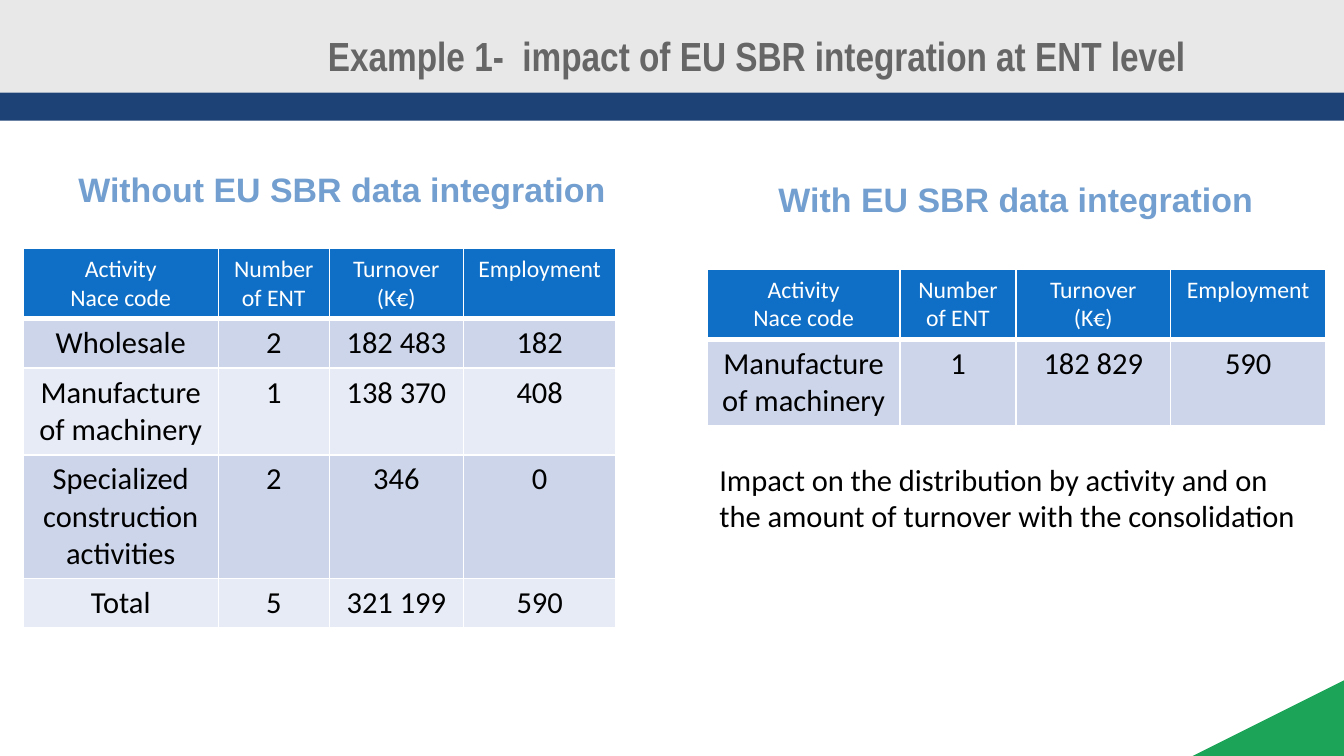
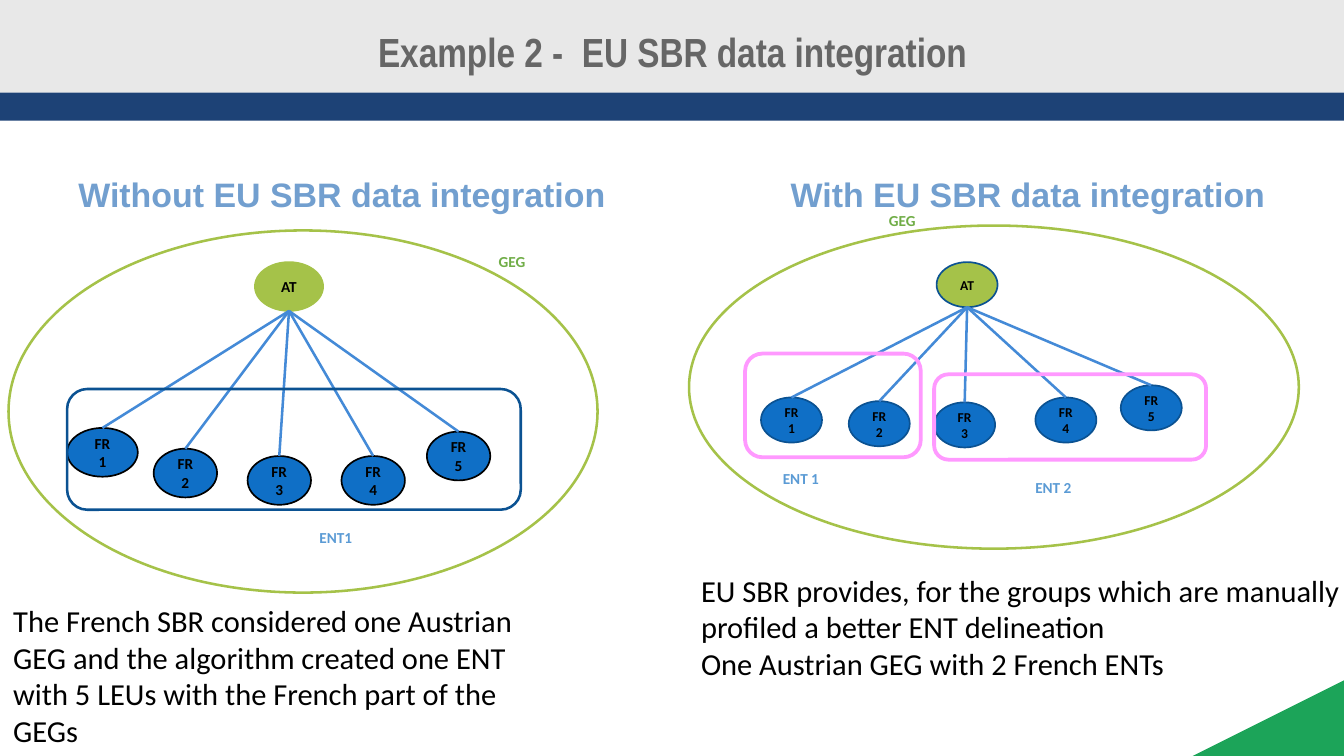
from lxml import etree
from pptx import Presentation
from pptx.dml.color import RGBColor
from pptx.enum.shapes import MSO_CONNECTOR, MSO_SHAPE
from pptx.enum.text import MSO_ANCHOR, MSO_AUTO_SIZE, PP_ALIGN
from pptx.oxml import parse_xml
from pptx.oxml.ns import nsdecls, qn
from pptx.util import Inches, Pt

OVAL, ROUNDED, BOX = MSO_SHAPE.OVAL, MSO_SHAPE.ROUNDED_RECTANGLE, MSO_SHAPE.RECTANGLE
STRAIGHT = MSO_CONNECTOR.STRAIGHT
TOP, MIDDLE, BOTTOM = MSO_ANCHOR.TOP, MSO_ANCHOR.MIDDLE, MSO_ANCHOR.BOTTOM
LEFT, CENTER = PP_ALIGN.LEFT, PP_ALIGN.CENTER
FIXED, GROW = MSO_AUTO_SIZE.NONE, MSO_AUTO_SIZE.SHAPE_TO_FIT_TEXT

WIDTH, HEIGHT = 11.02, 6.2
TWO_CONTENT = 3

COLORS = {
    "black": "000000", "white": "FFFFFF", "title": "666666", "heading": "729FCF",
    "band": "E8E8E8", "stripe": "1D4276", "corner": "1CA459",
    "blue": "0F6FC6", "navy": "0B5292", "link": "448AD7", "lime": "A5C249",
    "pink": "FF99FF", "geg": "70AD47", "ent": "5B9BD5",
    "odd row": "CCD5EA", "even row": "E7EBF5",
}

# Text styles: colour name and font values
STYLES = {
    "title": ("title", {"name": "Arial Narrow", "size": Pt(24), "bold": True}),
    "heading": ("heading", {"name": "Arial", "size": Pt(20), "bold": True}),
    "body": ("black", {"name": "Calibri", "size": Pt(18), "bold": False}),
    "table head": ("white", {"name": "Calibri", "size": Pt(14), "bold": False}),
    "node": ("black", {"name": "Calibri", "size": Pt(9), "bold": True}),
    "small node": ("black", {"name": "Calibri", "size": Pt(8), "bold": True}),
    "geg": ("geg", {"name": "Calibri", "size": Pt(9), "bold": True}),
    "ent": ("ent", {"name": "Calibri", "size": Pt(9), "bold": True}),
}


def color(name):
    return RGBColor.from_string(COLORS[name])


def inches(place):
    return [Inches(value) for value in place]


class Deck:
    def __init__(self):
        self.prs = Presentation()
        self.prs.slide_width, self.prs.slide_height = inches((WIDTH, HEIGHT))
        self.slide = None

    def new_slide(self, title, title_at, left_at, right_at):
        layout = self.prs.slide_layouts[TWO_CONTENT]
        self.slide = self.prs.slides.add_slide(layout)
        if len(self.prs.slides) == 1:
            self.decorate_master()
        heading, left, right = self.slide.placeholders
        self.placeholder(heading, title_at, title, "title", MIDDLE)
        self.placeholder(left, left_at, "Without EU SBR data integration",
                         "heading", BOTTOM, indent=0.12)
        self.placeholder(right, right_at, "With EU SBR data integration",
                         "heading", BOTTOM)

    def decorate_master(self):
        """Put the bands and the corner behind every slide."""
        band = self.shape(BOX, (0, 0, WIDTH, 0.76), fill="band")
        stripe = self.shape(BOX, (0, 0.76, WIDTH, 0.23), fill="stripe")
        outline = self.slide.shapes.build_freeform(Inches(WIDTH), Inches(5.58))
        outline.add_line_segments([inches((9.78, HEIGHT)), inches((WIDTH, HEIGHT))])
        corner = outline.convert_to_shape()
        self.paint(corner, fill="corner")
        tree = self.prs.slide_master.element.cSld.spTree
        for number, part in enumerate((band, stripe, corner)):
            part.element.nvSpPr.cNvPr.id = 100 + number
            tree.insert(2 + number, part.element)

    def fill_text(self, frame, text, style, align=LEFT):
        """Fill a text frame, one paragraph for each line."""
        color_name, values = STYLES[style]
        for number, line in enumerate(text.split("\n")):
            paragraph = frame.add_paragraph() if number else frame.paragraphs[0]
            paragraph.alignment = align
            run = paragraph.add_run()
            run.text = line
            for key, value in values.items():
                setattr(run.font, key, value)
            run.font.color.rgb = color(color_name)

    def placeholder(self, holder, place, text, style, anchor, indent=0):
        holder.left, holder.top, holder.width, holder.height = inches(place)
        frame = holder.text_frame
        settings = {"margin_left": 0, "margin_right": 0, "margin_top": 0,
                    "margin_bottom": 0, "word_wrap": True, "auto_size": FIXED,
                    "vertical_anchor": anchor}
        for key, value in settings.items():
            setattr(frame, key, value)
        paragraph = frame.paragraphs[0]
        properties = paragraph._p.get_or_add_pPr()
        properties.set("marL", str(Inches(indent)))
        properties.set("indent", "0")
        etree.SubElement(properties, qn("a:buNone"))
        paragraph.space_before = Pt(0)
        self.fill_text(frame, text, style, CENTER)

    def paint(self, shape, fill=None, line=None, weight=1):
        shape.shadow.inherit = False
        if fill:
            shape.fill.solid()
            shape.fill.fore_color.rgb = color(fill)
        else:
            shape.fill.background()
        if line:
            shape.line.color.rgb = color(line)
            shape.line.width = Pt(weight)
        else:
            shape.line.fill.background()

    def shape(self, kind, place, **look):
        shape = self.slide.shapes.add_shape(kind, *inches(place))
        self.paint(shape, **look)
        return shape

    def node(self, place, text, style, fill, line):
        node = self.shape(OVAL, place, fill=fill, line=line)
        node.text_frame.word_wrap = True
        node.text_frame.vertical_anchor = MIDDLE
        self.fill_text(node.text_frame, text, style, CENTER)

    def link(self, start, end):
        link = self.slide.shapes.add_connector(STRAIGHT, *inches(start + end))
        link.line.color.rgb = color("link")
        link.line.width = Pt(1.5)
        etree.SubElement(link.element.spPr, qn("a:effectLst"))

    def text(self, place, text, style="body", right_margin=0.1):
        frame = self.slide.shapes.add_textbox(*inches(place)).text_frame
        frame.word_wrap = True
        frame.auto_size = GROW
        frame.margin_right = Inches(right_margin)
        self.fill_text(frame, text, style)

    def borders(self, cell, bottom):
        properties = cell._tc.get_or_add_tcPr()
        for side, weight in (("L", 1), ("R", 1), ("T", 1), ("B", bottom)):
            properties.append(parse_xml(
                f'<a:ln{side} {nsdecls("a")} w="{Pt(weight)}"><a:solidFill>'
                f'<a:srgbClr val="{COLORS["white"]}"/></a:solidFill></a:ln{side}>'))

    def table(self, left, top, widths, heights, activities):
        rows = [TABLE_HEAD] + activities
        place = (left, top, sum(widths), sum(heights))
        table = self.slide.shapes.add_table(
            len(rows), len(widths), *inches(place)).table
        table.horz_banding = False
        for column, width in zip(table.columns, widths):
            column.width = Inches(width)
        for number, (row, height, values) in enumerate(zip(table.rows, heights, rows)):
            row.height = Inches(height)
            if number == 0:
                fill, style, bottom = "blue", "table head", 3
            else:
                fill = "odd row" if number % 2 else "even row"
                style, bottom = "body", 1
            for cell, value in zip(row.cells, values):
                self.borders(cell, bottom)
                cell.fill.solid()
                cell.fill.fore_color.rgb = color(fill)
                cell.vertical_anchor = TOP
                self.fill_text(cell.text_frame, value, style, CENTER)

    def group_diagram(self, geg, hub, units, ents, style, node_line, hub_line,
                      ent_line, ent_weight):
        """Draw a group: its head on top, linked to the French units."""
        for number, unit in enumerate(units, 1):
            self.node(unit, f"FR {number}", style, "blue", node_line)
        self.node(hub, "AT", style, "lime", hub_line)
        left, top, width, height = hub
        for x, y, unit_width, _ in units:
            self.link((left + width / 2, top + height), (x + unit_width / 2, y))
        self.shape(OVAL, geg, line="lime", weight=1.5)
        for ent in ents:
            self.shape(ROUNDED, ent, line=ent_line, weight=ent_weight)


TABLE_HEAD = ["Activity\nNace code", "Number of ENT", "Turnover (K€)", "Employment"]


def activity_slide(deck):
    deck.new_slide("Example 1-  impact of EU SBR integration at ENT level",
                   (1.45, 0.2, 9.51, 0.51), (0.07, 1.11, 5.35, 0.61),
                   (5.8, 1.11, 5.06, 0.69))
    deck.table(0.19, 2.04, [1.6, 0.91, 1.1, 1.25], [0.56, 0.4, 0.71, 1.01, 0.4], [
        ["Wholesale", "2", "182 483", "182"],
        ["Manufacture of machinery", "1", "138 370", "408"],
        ["Specialized construction activities", "2", "346", "0"],
        ["Total", "5", "321 199", "590"],
    ])
    deck.table(5.8, 2.21, [1.58, 0.95, 1.27, 1.27], [0.56, 0.71], [
        ["Manufacture of machinery", "1", "182 829", "590"],
    ])
    deck.text((5.8, 3.73, 4.96, 0.71),
              "Impact on the distribution by activity and on the amount of "
              "turnover with the consolidation")


def group_slide(deck):
    deck.new_slide("Example 2 -  EU SBR data integration",
                   (0.76, 0.13, 9.51, 0.58), (0.07, 1.07, 5.35, 0.69),
                   (6.1, 1.07, 4.66, 0.69))

    # Without integration: one ENT
    deck.group_diagram(
        geg=(0.07, 1.89, 4.83, 2.97), hub=(2.09, 2.15, 0.56, 0.4),
        units=[(0.55, 3.51, 0.58, 0.4)] + [
            (x, y, 0.52, 0.4)
            for x, y in ((1.26, 3.68), (2.03, 3.74), (2.8, 3.74), (3.5, 3.54))],
        ents=[(0.55, 3.19, 3.72, 0.99)], style="node", node_line="black",
        hub_line="lime", ent_line="navy", ent_weight=1.5)
    deck.text((3.99, 2.02, 0.6, 0.25), "GEG", "geg")
    deck.text((2.52, 4.28, 0.49, 0.25), "ENT1", "ent")
    deck.text((0.01, 4.89, 4.59, 1.31),
              "The French SBR considered one Austrian GEG and the algorithm "
              "created one ENT with 5 LEUs with the French part of the GEGs")

    # With integration: two ENTs
    deck.group_diagram(
        geg=(5.65, 1.85, 5, 2.65), hub=(7.68, 2.15, 0.5, 0.37),
        units=[(x, y, 0.5, 0.37) for x, y in (
            (6.24, 3.26), (6.96, 3.29), (7.66, 3.3), (8.49, 3.26), (9.19, 3.16))],
        ents=[(6.11, 2.9, 1.44, 0.85), (7.66, 3.07, 2.23, 0.7)],
        style="small node", node_line="navy", hub_line="navy",
        ent_line="pink", ent_weight=2.25)
    deck.text((7.19, 1.68, 0.64, 0.25), "GEG", "geg")
    deck.text((6.32, 3.8, 1.59, 0.25), "ENT 1", "ent")
    deck.text((8.39, 3.87, 1.15, 0.25), "ENT 2", "ent")
    deck.text((5.65, 4.64, 5.37, 1.01),
              "EU SBR provides, for the groups which are manually profiled a "
              "better ENT delineation\nOne Austrian GEG with 2 French ENTs",
              right_margin=0)


def main():
    deck = Deck()
    activity_slide(deck)
    group_slide(deck)
    deck.prs.save("out.pptx")


if __name__ == "__main__":
    main()
